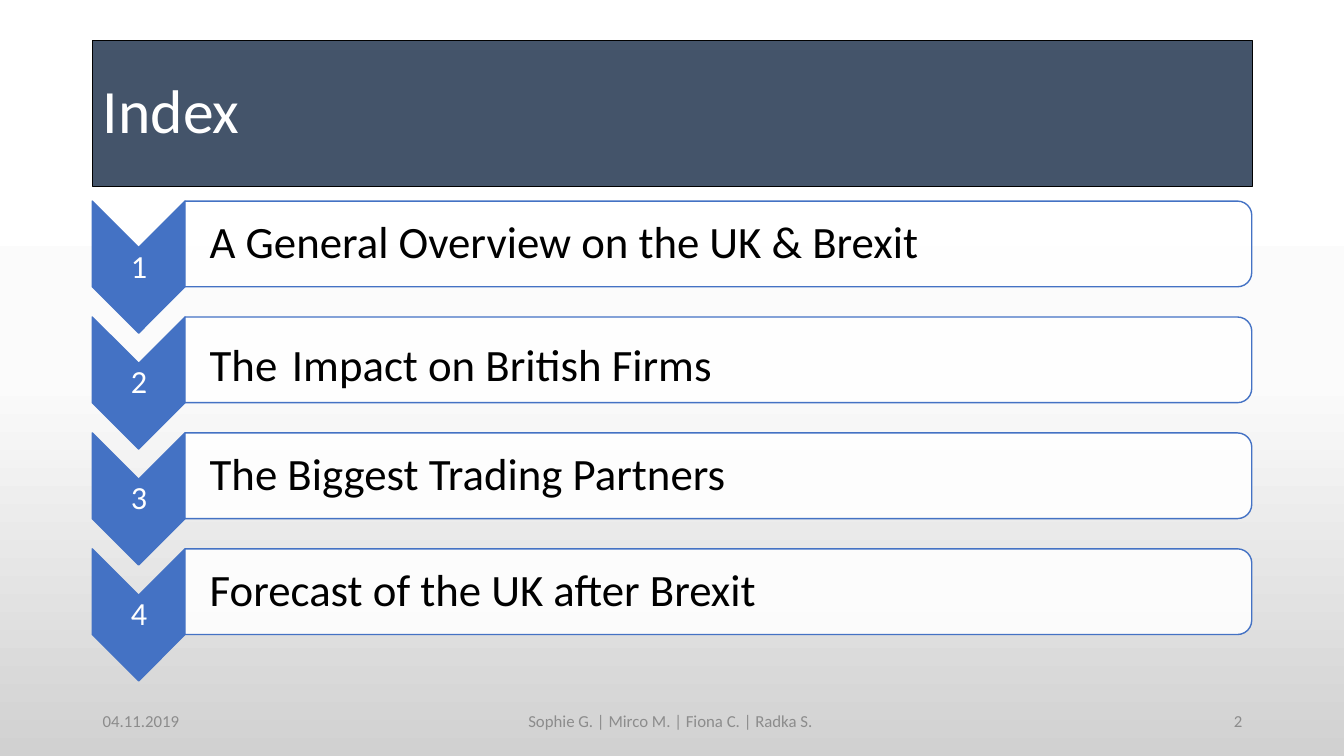
from copy import deepcopy

from lxml.etree import SubElement
from pptx import Presentation
from pptx.dml.color import RGBColor
from pptx.enum.shapes import MSO_SHAPE as SHAPE
from pptx.enum.text import MSO_ANCHOR as ANCHOR, MSO_AUTO_SIZE as AUTO_SIZE, PP_ALIGN as ALIGN
from pptx.oxml.ns import qn
from pptx.util import Emu, Pt

PX = 9144  # 100 px to the inch
FONT = "Calibri"
BLUE, SLATE, GREY = "4472C4", "44546A", "8C8C8C"
WHITE, BLACK = "FFFFFF", "000000"
BACKGROUND_STOPS = [(0.15, WHITE), (0.5, "FBFBFB"), (1, "D1D1D1")]

# Each topic is a list of (text, size) spans
TOPICS = [
    [("A General Overview on the UK & Brexit", 32)],
    [("The", 32), (" ", 46), ("Impact on British Firms", 32)],
    [("The Biggest Trading Partners", 32)],
    [("Forecast of the UK after Brexit", 32)],
]
FOOTERS = [
    (92, 300, "04.11.2019", ALIGN.LEFT),
    (442, 450, "Sophie G. | Mirco M. | Fiona C. | Radka S. ", ALIGN.CENTER),
    (942, 300, "2", ALIGN.RIGHT),
]
ROW_PITCH = 115


def px(length):
    return Emu(length * PX)


def colour(code):
    return RGBColor.from_string(code)


def set_attributes(target, values):
    for name, value in values.items():
        setattr(target, name, value)


def paint(shape, fill, line):
    shape.fill.solid()
    shape.fill.fore_color.rgb = colour(fill)
    shape.line.color.rgb = colour(line)
    shape.line.width = Pt(1)


def write(box, spans, ink, align=ALIGN.LEFT, spacing=0.9, **margins):
    frame = box.text_frame
    set_attributes(frame, {
        "word_wrap": True,
        "auto_size": AUTO_SIZE.NONE,
        "vertical_anchor": ANCHOR.MIDDLE,
        **margins,
    })
    para = frame.paragraphs[0]
    set_attributes(para, {"alignment": align, "line_spacing": spacing})
    for text, size in spans:
        span = para.add_run()
        span.text = text
        set_attributes(span.font, {"name": FONT, "size": Pt(size)})
        span.font.color.rgb = colour(ink)


def add_text(page, left, top, width, height, spans, ink, **layout):
    box = page.shapes.add_textbox(px(left), px(top), px(width), px(height))
    write(box, spans, ink, **layout)


def add_turned(page, kind, left, top, width, height, fill):
    """Add a shape turned a quarter clockwise; the frame is given before the turn."""
    shape = page.shapes.add_shape(kind, px(left), px(top), px(width), px(height))
    shape.rotation = 90
    shape.shadow.inherit = False
    paint(shape, fill, BLUE)
    return shape


def add_background(page):
    fill = page.background.fill
    fill.gradient()
    fill.gradient_angle = 270
    stop_list = next(page.element.iter(qn("a:gsLst")))
    stop_list.append(deepcopy(stop_list[-1]))
    for stop, (position, code) in zip(fill.gradient_stops, BACKGROUND_STOPS):
        stop.position = position
        stop.color.rgb = colour(code)


def add_title(page, text):
    title = page.shapes.title
    set_attributes(title, {"left": px(92), "top": px(40), "width": px(1150), "height": px(145)})
    paint(title, SLATE, BLACK)
    write(title, [(text, 44)], WHITE)


def add_topic(page, number, spans):
    shift = (number - 1) * ROW_PITCH
    slim = dict.fromkeys(["margin_left", "margin_top", "margin_right", "margin_bottom"], px(2))

    # Numbered chevron
    add_turned(page, SHAPE.CHEVRON, 72, 219 + shift, 131, 92, BLUE)
    add_text(page, 92, 246 + shift, 92, 39, [(str(number), 23)], WHITE,
             align=ALIGN.CENTER, **slim)

    # Slightly transparent bar with the topic
    bar = add_turned(page, SHAPE.ROUND_2_SAME_RECTANGLE, 670, shift - 287, 85, 1058, WHITE)
    bar_colour = next(bar.element.spPr.iter(qn("a:srgbClr")))
    SubElement(bar_colour, qn("a:alpha"), val="90000")
    add_text(page, 183, 204 + shift, 1054, 77, spans, BLACK, **{**slim, "margin_left": px(25)})


def main():
    deck = Presentation()
    set_attributes(deck, {"slide_width": px(1333), "slide_height": px(750)})
    page = deck.slides.add_slide(deck.slide_layouts[5])

    add_background(page)
    add_title(page, "Index")
    for number, spans in enumerate(TOPICS, start=1):
        add_topic(page, number, spans)

    # Date, authors and page number
    for left, width, text, align in FOOTERS:
        add_text(page, left, 695, width, 40, [(text, 12)], GREY, align=align, spacing=1.0)

    deck.save("out.pptx")


if __name__ == "__main__":
    main()
